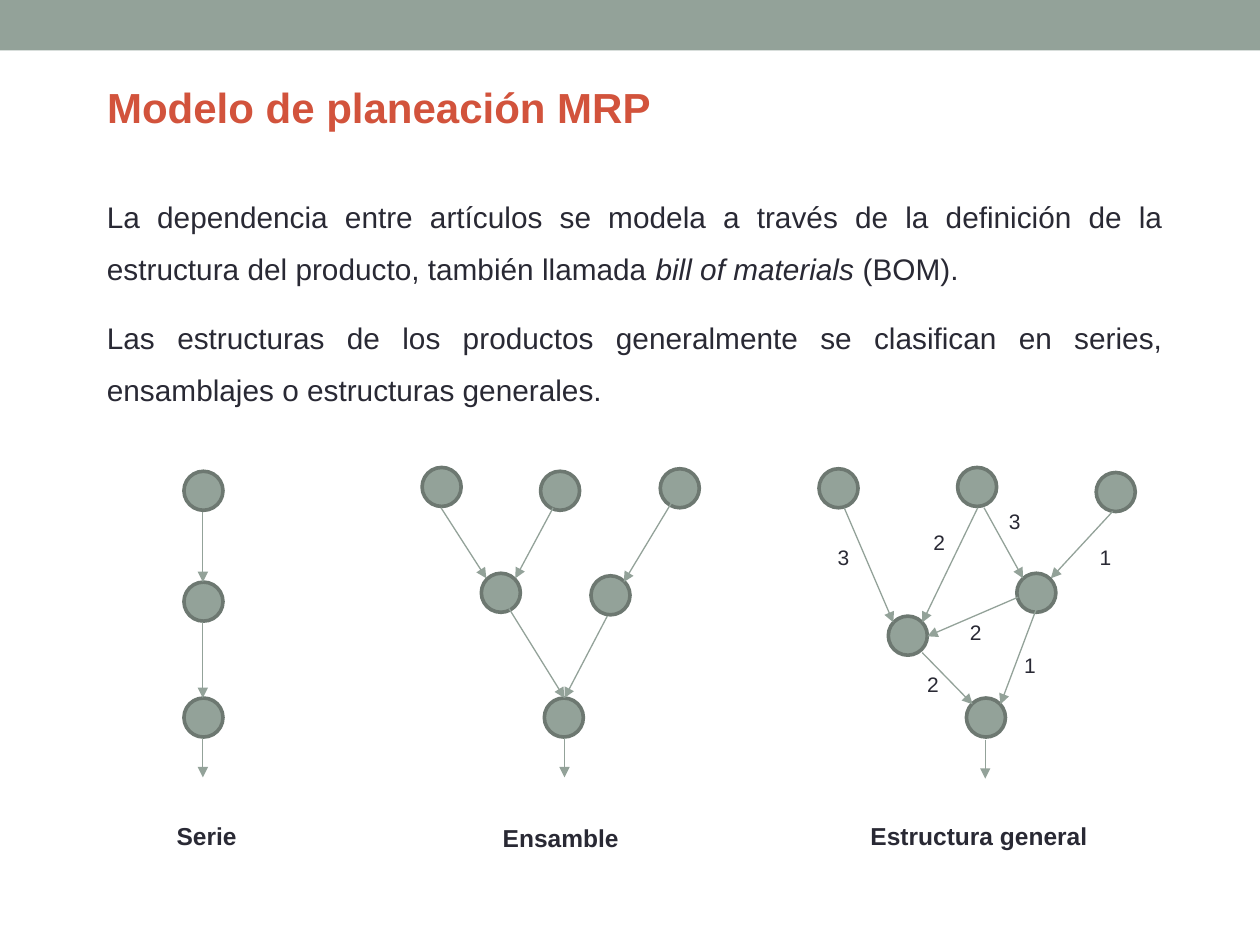
from lxml.etree import SubElement
from pptx import Presentation
from pptx.dml.color import RGBColor
from pptx.enum.shapes import MSO_CONNECTOR, MSO_SHAPE
from pptx.enum.text import MSO_ANCHOR, PP_ALIGN
from pptx.oxml.ns import qn
from pptx.util import Inches, Pt

COLORS = {"sage": "93A299", "outline": "6D7871", "text": "292934", "title": "D2533C"}
NODE_SIZE = 0.31

# Node corners (left, top) and arrows (x1, y1, x2, y2) of each structure, in inches
STRUCTURES = {
    "Serie": {
        "label": (1.14, 6.47, 1.0),
        "nodes": [(1.46, 3.74), (1.46, 4.62), (1.46, 5.54)],
        "arrows": [(1.61, 4.06, 1.61, 4.62), (1.61, 4.94, 1.61, 5.54),
                   (1.61, 5.86, 1.61, 6.17)],
    },
    "Ensamble": {
        "label": (3.69, 6.48, 1.52),
        "nodes": [(3.35, 3.71), (4.29, 3.74), (5.24, 3.72),
                  (3.82, 4.55), (4.69, 4.57), (4.32, 5.54)],
        "arrows": [(3.5, 4.03, 3.86, 4.59), (4.39, 4.03, 4.09, 4.59),
                   (5.33, 3.99, 4.95, 4.62), (4.04, 4.83, 4.48, 5.54),
                   (4.82, 4.89, 4.48, 5.54), (4.48, 5.86, 4.48, 6.17)],
    },
    "Estructura general": {
        "label": (6.59, 6.47, 2.36),
        "nodes": [(6.5, 3.72), (7.6, 3.71), (8.7, 3.75),
                  (8.07, 4.55), (7.05, 4.89), (7.67, 5.54)],
        "arrows": [(6.7, 4.03, 7.09, 4.94), (7.76, 4.03, 7.32, 4.94),
                   (7.81, 4.03, 8.12, 4.59), (8.83, 4.06, 8.34, 4.59),
                   (8.08, 4.74, 7.36, 5.05), (7.32, 5.18, 7.72, 5.59),
                   (8.23, 4.82, 7.94, 5.59), (7.82, 5.87, 7.82, 6.18)],
    },
}
QUANTITIES = [("3", 6.55, 4.27), ("2", 7.31, 4.15), ("3", 7.91, 3.99), ("1", 8.63, 4.27),
              ("2", 7.6, 4.87), ("2", 7.26, 5.28), ("1", 8.03, 5.13)]
BODY = [
    [("La dependencia entre artículos se modela a través de la definición de la "
      "estructura del producto, también llamada ", False),
     ("bill of materials ", True), ("(BOM).", False)],
    [("Las estructuras de los productos generalmente se clasifican en series, "
      "ensamblajes o estructuras generales.", False)],
]


def rgb(name):
    return RGBColor.from_string(COLORS[name])


def set_font(p, size, color="text", bold=False):
    p.font.name = "Arial"
    p.font.size = Pt(size)
    p.font.bold = bold
    p.font.color.rgb = rgb(color)


def add_filled(s, kind, x, y, w, h):
    """Add a sage shape without line or shadow."""
    sp = s.shapes.add_shape(kind, Inches(x), Inches(y), Inches(w), Inches(h))
    sp.shadow.inherit = False
    sp.fill.solid()
    sp.fill.fore_color.rgb = rgb("sage")
    sp.line.fill.background()
    return sp


def add_node(s, x, y):
    sp = add_filled(s, MSO_SHAPE.OVAL, x, y, NODE_SIZE, NODE_SIZE)
    sp.line.color.rgb = rgb("outline")
    sp.line.width = Pt(2.08)


def add_arrow(s, x1, y1, x2, y2):
    line = s.shapes.add_connector(MSO_CONNECTOR.STRAIGHT, Inches(x1), Inches(y1),
                                  Inches(x2), Inches(y2))
    line.line.color.rgb = rgb("sage")
    line.line.width = Pt(0.75)
    SubElement(line.line._get_or_add_ln(), qn("a:tailEnd"), type="triangle")
    SubElement(line._element.spPr, qn("a:effectLst"))


def add_text_box(s, x, y, w, h):
    tf = s.shapes.add_textbox(Inches(x), Inches(y), Inches(w), Inches(h)).text_frame
    tf.word_wrap = True
    return tf


def add_label(s, text, x, y, w, h, size, bold=False, align=PP_ALIGN.LEFT):
    p = add_text_box(s, x, y, w, h).paragraphs[0]
    p.text = text
    p.alignment = align
    set_font(p, size, bold=bold)


def set_title(s, text):
    title = s.shapes.title
    title.left, title.top = Inches(0.75), Inches(0.6)
    title.width, title.height = Inches(8.74), Inches(0.5)
    tf = title.text_frame
    tf.text = text
    tf.vertical_anchor = MSO_ANCHOR.MIDDLE
    p = tf.paragraphs[0]
    p.alignment = PP_ALIGN.LEFT
    set_font(p, 24, "title", bold=True)


def add_body(s):
    tf = add_text_box(s, 0.75, 1.4, 8.58, 1.8)
    for i, runs in enumerate(BODY):
        p = tf.add_paragraph() if i else tf.paragraphs[0]
        p.alignment = PP_ALIGN.JUSTIFY
        p.line_spacing = 1.45
        p.space_before = Pt(10)
        set_font(p, 17)
        for text, italic in runs:
            r = p.add_run()
            r.text = text
            r.font.italic = italic


def add_structure(s, name, parts):
    for node in parts["nodes"]:
        add_node(s, *node)
    for arrow in parts["arrows"]:
        add_arrow(s, *arrow)
    add_label(s, name, *parts["label"], 0.34, 14, bold=True, align=PP_ALIGN.CENTER)


def main():
    prs = Presentation()
    prs.slide_width, prs.slide_height = Inches(10), Inches(7.5)
    s = prs.slides.add_slide(prs.slide_layouts[5])
    add_filled(s, MSO_SHAPE.RECTANGLE, 0, 0, 10, 0.4)
    set_title(s, "Modelo de planeación MRP")
    add_body(s)
    for name, parts in STRUCTURES.items():
        add_structure(s, name, parts)
    for text, x, y in QUANTITIES:
        add_label(s, text, x, y, 0.34, 0.3, 12)
    prs.save("out.pptx")


if __name__ == "__main__":
    main()
